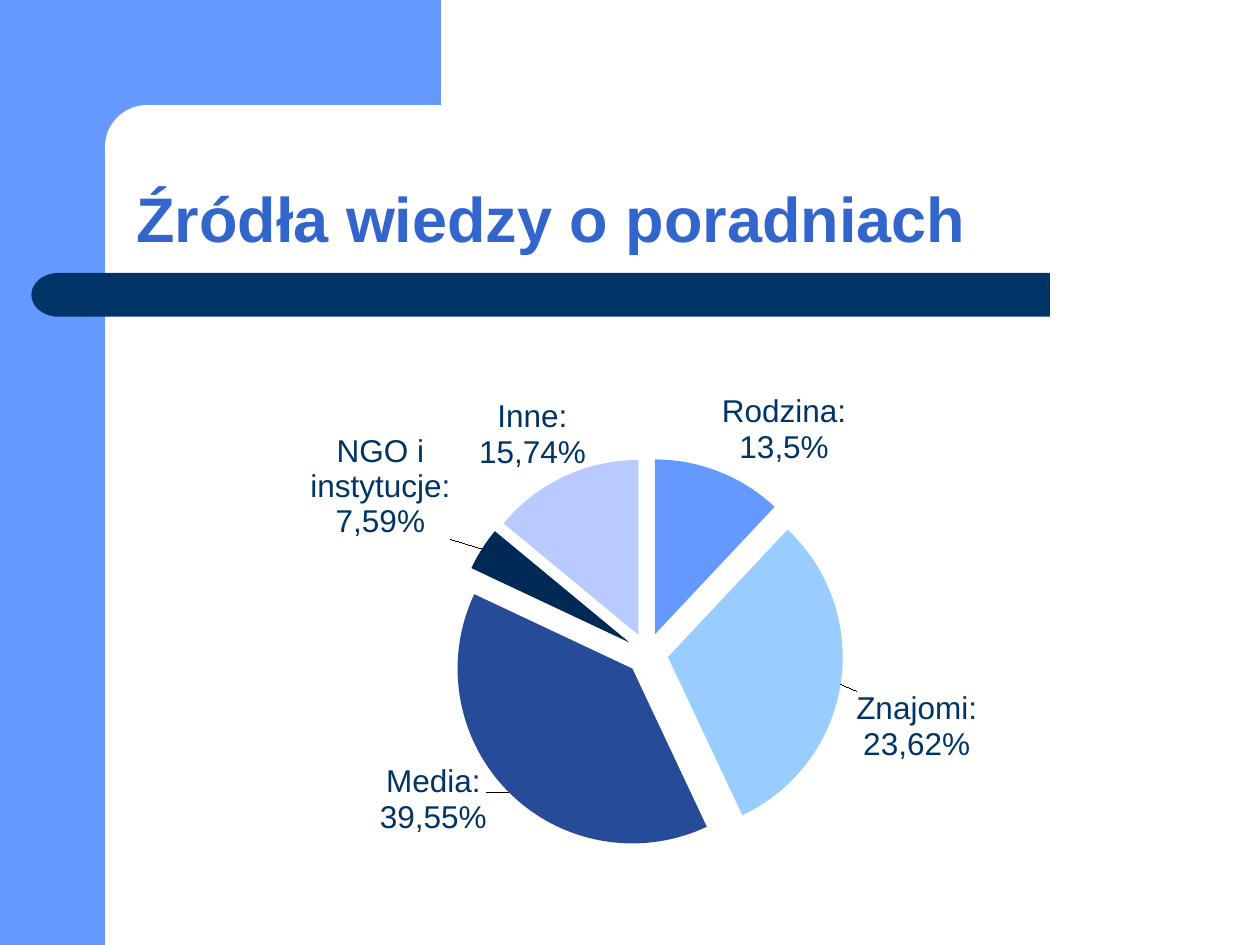
import pptx
import pptx.chart.data
import pptx.dml.color
import pptx.enum.chart
import pptx.enum.shapes
import pptx.enum.text
import pptx.util
from lxml import etree
from pptx.util import Pt

SKY = pptx.dml.color.RGBColor(0x66, 0x99, 0xFF)
WHITE = pptx.dml.color.RGBColor(0xFF, 0xFF, 0xFF)
NAVY = pptx.dml.color.RGBColor(0x00, 0x33, 0x66)
TITLE_BLUE = pptx.dml.color.RGBColor(0x33, 0x66, 0xCC)
PALE_BLUE = pptx.dml.color.RGBColor(0x99, 0xCC, 0xFF)
ROYAL = pptx.dml.color.RGBColor(0x26, 0x4C, 0x99)
MIDNIGHT = pptx.dml.color.RGBColor(0x00, 0x2A, 0x56)
LAVENDER = pptx.dml.color.RGBColor(0xB8, 0xCA, 0xFF)

FONT = "Arial"
SOURCES = [
    ("Rodzina", 12, "13,5%", SKY, (0, 0)),
    ("Znajomi", 31, "23,62%", PALE_BLUE, (0.01, 0.01)),
    ("Media", 39, "39,55%", ROYAL, (-0.02, -0.06)),
    ("NGO i instytucje", 4, "7,59%", MIDNIGHT, (-0.03, -0.01)),
    ("Inne", 14, "15,74%", LAVENDER, (0.03, 0)),
]


def add_block(slide, kind, left, top, width, height, color):
    shape = slide.shapes.add_shape(kind, Pt(left), Pt(top), Pt(width), Pt(height))
    shape.shadow.inherit = False
    shape.fill.solid()
    shape.fill.fore_color.rgb = color
    shape.line.fill.background()
    return shape


def add_frame(slide):
    kinds = pptx.enum.shapes.MSO_SHAPE
    add_block(slide, kinds.RECTANGLE, 0, 0, 60, 540, SKY)
    add_block(slide, kinds.RECTANGLE, 54, 0, 198, 84, SKY)
    panel = add_block(slide, kinds.ROUNDED_RECTANGLE, 60, 60, 402, 48, WHITE)
    panel.adjustments[0] = 0.5
    bar = add_block(slide, kinds.ROUNDED_RECTANGLE, 48, 156, 552, 25, NAVY)
    bar.adjustments[0] = 0
    cap = add_block(slide, kinds.FLOWCHART_DELAY, 18, 156, 31, 25, NAVY)
    cap._element.spPr.xfrm.set("flipH", "1")


def add_title(slide, text):
    box = slide.shapes.add_textbox(Pt(70.8), Pt(60), Pt(631.2), Pt(90))
    frame = box.text_frame
    frame.word_wrap = True
    frame.vertical_anchor = pptx.enum.text.MSO_ANCHOR.BOTTOM
    paragraph = frame.paragraphs[0]
    paragraph.text = text
    paragraph.line_spacing = 0.9
    paragraph.font.name = FONT
    paragraph.font.size = Pt(36)
    paragraph.font.bold = True
    paragraph.font.color.rgb = TITLE_BLUE


def manual_layout(namespace, **settings):
    layout = etree.Element(f"{{{namespace}}}layout")
    manual = etree.SubElement(layout, f"{{{namespace}}}manualLayout")
    for name, value in settings.items():
        etree.SubElement(manual, f"{{{namespace}}}{name}", val=str(value))
    return layout


def set_plot_layout(chart, **fractions):
    namespace = chart._chartSpace.nsmap["c"]
    plot_area = chart._chartSpace.chart.plotArea
    for old_layout in plot_area.findall(f"{{{namespace}}}layout"):
        plot_area.remove(old_layout)
    plot_area.insert(0, manual_layout(
        namespace, layoutTarget="inner", xMode="edge", yMode="edge", **fractions))


def shift_labels(series, offsets):
    namespace = series._element.nsmap["c"]
    labels = series._element.iter(f"{{{namespace}}}dLbl")
    for label, (right, down) in zip(labels, offsets):
        label.insert(1, manual_layout(namespace, x=right, y=down))


def explode_slices(series, percent):
    namespace = series._element.nsmap["c"]
    explosion = etree.Element(f"{{{namespace}}}explosion", val=str(percent))
    series._element.find(f"{{{namespace}}}dPt").addprevious(explosion)


def style_slice(point, label, color):
    point.format.fill.solid()
    point.format.fill.fore_color.rgb = color
    point.format.line.fill.background()
    data_label = point.data_label
    run = data_label.text_frame.paragraphs[0].add_run()
    run.text = label
    run.font.name = FONT
    run.font.size = Pt(18)
    run.font.color.rgb = NAVY
    data_label.position = pptx.enum.chart.XL_LABEL_POSITION.OUTSIDE_END


def add_source_chart(slide):
    data = pptx.chart.data.CategoryChartData()
    data.categories = [name for name, *_ in SOURCES]
    data.add_series("Series 1", [value for _, value, *_ in SOURCES])
    chart = slide.shapes.add_chart(
        pptx.enum.chart.XL_CHART_TYPE.PIE, Pt(127.4), Pt(207.4), Pt(480.2), Pt(319.7), data
    ).chart
    chart.has_legend = False
    chart.has_title = False
    chart.font.name = FONT
    chart.font.size = Pt(18)
    chart.font.color.rgb = NAVY
    plot = chart.plots[0]
    plot.vary_by_categories = True
    plot.has_data_labels = True
    plot.data_labels.show_category_name = True
    plot.data_labels.show_value = True
    series = plot.series[0]
    for index, (name, _, share, color, _) in enumerate(SOURCES):
        style_slice(series.points[index], f"{name}: {share}", color)
    shift_labels(series, [offset for *_, offset in SOURCES])
    explode_slices(series, 12)
    set_plot_layout(chart, x=0.27, y=0.17, w=0.47, h=0.7)


def main():
    presentation = pptx.Presentation()
    presentation.slide_width = Pt(720)
    presentation.slide_height = Pt(540)
    slide = presentation.slides.add_slide(presentation.slide_layouts[6])
    add_frame(slide)
    add_title(slide, "Źródła wiedzy o poradniach")
    add_source_chart(slide)
    presentation.save("out.pptx")


if __name__ == "__main__":
    main()
